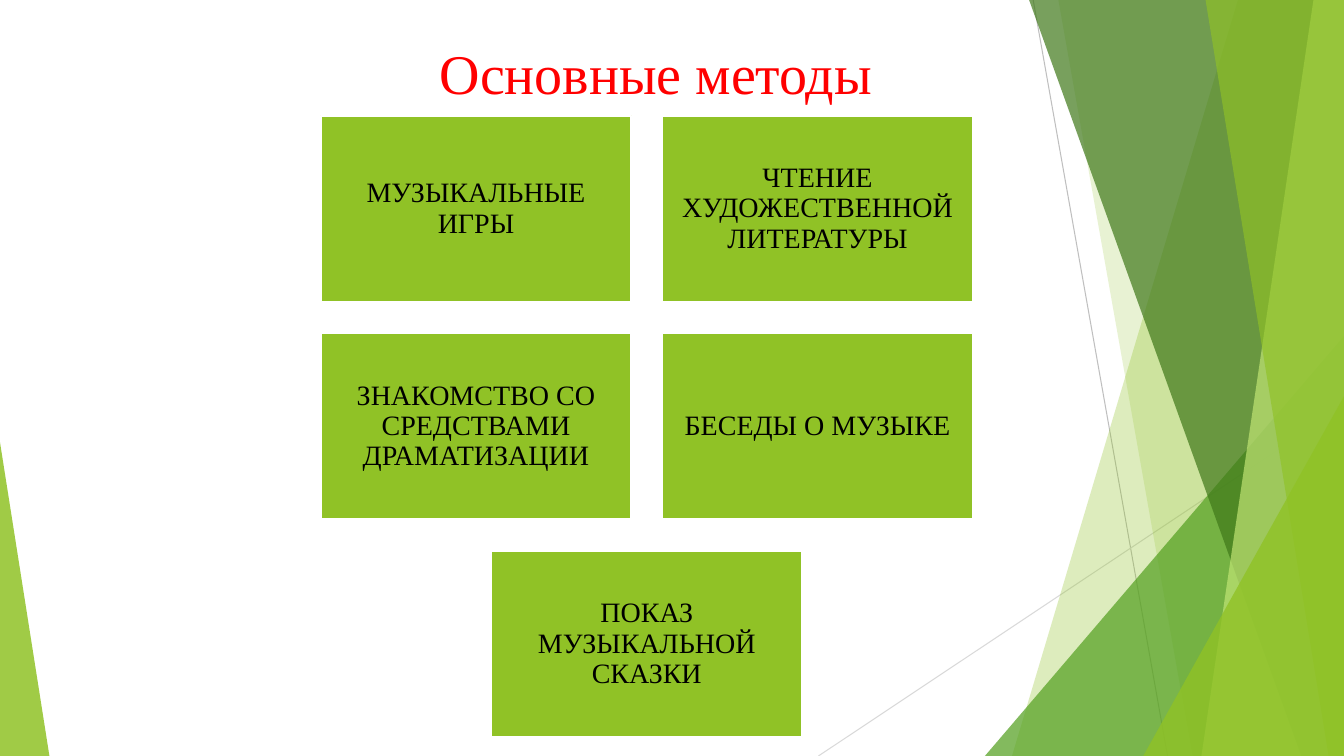
from dataclasses import dataclass

from lxml import etree
from pptx import Presentation
from pptx.dml.color import RGBColor
from pptx.enum.shapes import MSO_CONNECTOR, MSO_SHAPE
from pptx.enum.text import MSO_ANCHOR, PP_ALIGN
from pptx.oxml.ns import qn
from pptx.util import Pt

STRAIGHT = MSO_CONNECTOR.STRAIGHT
RECTANGLE = MSO_SHAPE.RECTANGLE
TRIANGLE = MSO_SHAPE.ISOSCELES_TRIANGLE
MIDDLE = MSO_ANCHOR.MIDDLE
TOP = MSO_ANCHOR.TOP
CENTER = PP_ALIGN.CENTER

WHITE = RGBColor(0xFF, 0xFF, 0xFF)
BLACK = RGBColor(0x00, 0x00, 0x00)
RED = RGBColor(0xFF, 0x00, 0x00)
LIME = RGBColor(0x90, 0xC2, 0x26)
PALE_LIME = RGBColor(0xC0, 0xE4, 0x74)
GREEN = RGBColor(0x54, 0xA0, 0x21)
DARK_GREEN = RGBColor(0x3F, 0x78, 0x19)
GREY = RGBColor(0xBF, 0xBF, 0xBF)
LIGHT_GREY = RGBColor(0xD9, 0xD9, 0xD9)

FONT = "Times New Roman"
PAGE_WIDTH, PAGE_HEIGHT = 960, 540
CARD_WIDTH, CARD_HEIGHT = 222, 133
COLUMN_PITCH, ROW_PITCH = 243.9, 155.4
GRID_CENTER, GRID_TOP = 462, 82.7


@dataclass(frozen=True)
class Ray:
    start: tuple[float, float]
    end: tuple[float, float]
    color: RGBColor


@dataclass(frozen=True)
class Band:
    top_left: float
    bottom_left: float
    color: RGBColor
    opacity: int


@dataclass(frozen=True)
class Wedge:
    left: float
    width: float
    height: float
    apex: float
    color: RGBColor
    opacity: int


RAYS = [
    Ray((738, 0), (834, PAGE_HEIGHT), GREY),
    Ray((PAGE_WIDTH, 290), (584.6, PAGE_HEIGHT), LIGHT_GREY),
]
FACETS = [
    Band(884.3, 722.9, LIME, 30),
    Band(756, 851.8, LIME, 20),
    Wedge(703.5, 256.5, 300, 1, GREEN, 72),
    Band(735.1, 929.5, DARK_GREEN, 70),
    Band(938.2, 858.2, PALE_LIME, 70),
    Band(861.1, 949, LIME, 65),
    Wedge(816.6, 143.4, 257, 1, LIME, 80),
    Wedge(0, 35.3, 224, 0, LIME, 85),
]
METHOD_ROWS = [
    ["МУЗЫКАЛЬНЫЕ ИГРЫ", "ЧТЕНИЕ ХУДОЖЕСТВЕННОЙ ЛИТЕРАТУРЫ"],
    ["ЗНАКОМСТВО СО СРЕДСТВАМИ ДРАМАТИЗАЦИИ", "БЕСЕДЫ О МУЗЫКЕ"],
    ["ПОКАЗ МУЗЫКАЛЬНОЙ СКАЗКИ"],
]


def draw_ray(page, ray: Ray) -> None:
    line = page.shapes.add_connector(
        STRAIGHT, *(Pt(value) for value in ray.start + ray.end)
    )
    line.line.color.rgb = ray.color
    line.line.width = Pt(0.75)
    etree.SubElement(line._element.spPr, qn("a:effectLst"))


def paint(shape, color: RGBColor, opacity: int) -> None:
    shape.shadow.inherit = False
    shape.line.fill.background()
    shape.fill.solid()
    shape.fill.fore_color.rgb = color
    color_node = shape._element.spPr.find(qn("a:solidFill"))[0]
    etree.SubElement(color_node, qn("a:alpha"), val=str(opacity * 1000))


def draw_band(page, band: Band) -> None:
    outline = page.shapes.build_freeform(Pt(band.top_left), 0)
    corners = [(PAGE_WIDTH, 0), (PAGE_WIDTH, PAGE_HEIGHT), (band.bottom_left, PAGE_HEIGHT)]
    outline.add_line_segments([(Pt(x), Pt(y)) for x, y in corners], close=True)
    paint(outline.convert_to_shape(), band.color, band.opacity)


def draw_wedge(page, wedge: Wedge) -> None:
    shape = page.shapes.add_shape(
        TRIANGLE, Pt(wedge.left), Pt(PAGE_HEIGHT - wedge.height),
        Pt(wedge.width), Pt(wedge.height),
    )
    shape.adjustments[0] = wedge.apex
    paint(shape, wedge.color, wedge.opacity)


def write(box, text: str, *, size: float, color: RGBColor, anchor=TOP,
          spacing: float = 1.0, inset: float | None = None) -> None:
    frame = box.text_frame
    frame.word_wrap = True
    frame.vertical_anchor = anchor
    if inset is not None:
        frame.margin_left = frame.margin_right = Pt(inset)
        frame.margin_top = frame.margin_bottom = Pt(inset)
    para = frame.paragraphs[0]
    para.alignment = CENTER
    para.line_spacing = spacing
    span = para.add_run()
    span.text = text
    span.font.name = FONT
    span.font.size = Pt(size)
    span.font.color.rgb = color


def draw_card(page, label: str, left: float, top: float) -> None:
    card = page.shapes.add_shape(
        RECTANGLE, Pt(left), Pt(top), Pt(CARD_WIDTH), Pt(CARD_HEIGHT)
    )
    card.shadow.inherit = False
    card.fill.solid()
    card.fill.fore_color.rgb = LIME
    card.line.color.rgb = WHITE
    card.line.width = Pt(1.5)
    write(card, label, size=20, color=BLACK, anchor=MIDDLE, spacing=0.9, inset=6)


def draw_methods(page) -> None:
    for row, labels in enumerate(METHOD_ROWS):
        row_width = CARD_WIDTH + COLUMN_PITCH * (len(labels) - 1)
        for column, label in enumerate(labels):
            left = GRID_CENTER - row_width / 2 + column * COLUMN_PITCH
            draw_card(page, label, left, GRID_TOP + row * ROW_PITCH)


def main() -> None:
    deck = Presentation()
    deck.slide_width, deck.slide_height = Pt(PAGE_WIDTH), Pt(PAGE_HEIGHT)
    page = deck.slides.add_slide(deck.slide_layouts[6])
    for ray in RAYS:
        draw_ray(page, ray)
    for facet in FACETS:
        if isinstance(facet, Band):
            draw_band(page, facet)
        else:
            draw_wedge(page, facet)
    draw_methods(page)
    title = page.shapes.add_textbox(Pt(260), Pt(23.8), Pt(417), Pt(55.4))
    write(title, "Основные методы", size=40, color=RED)
    deck.save("out.pptx")


if __name__ == "__main__":
    main()
